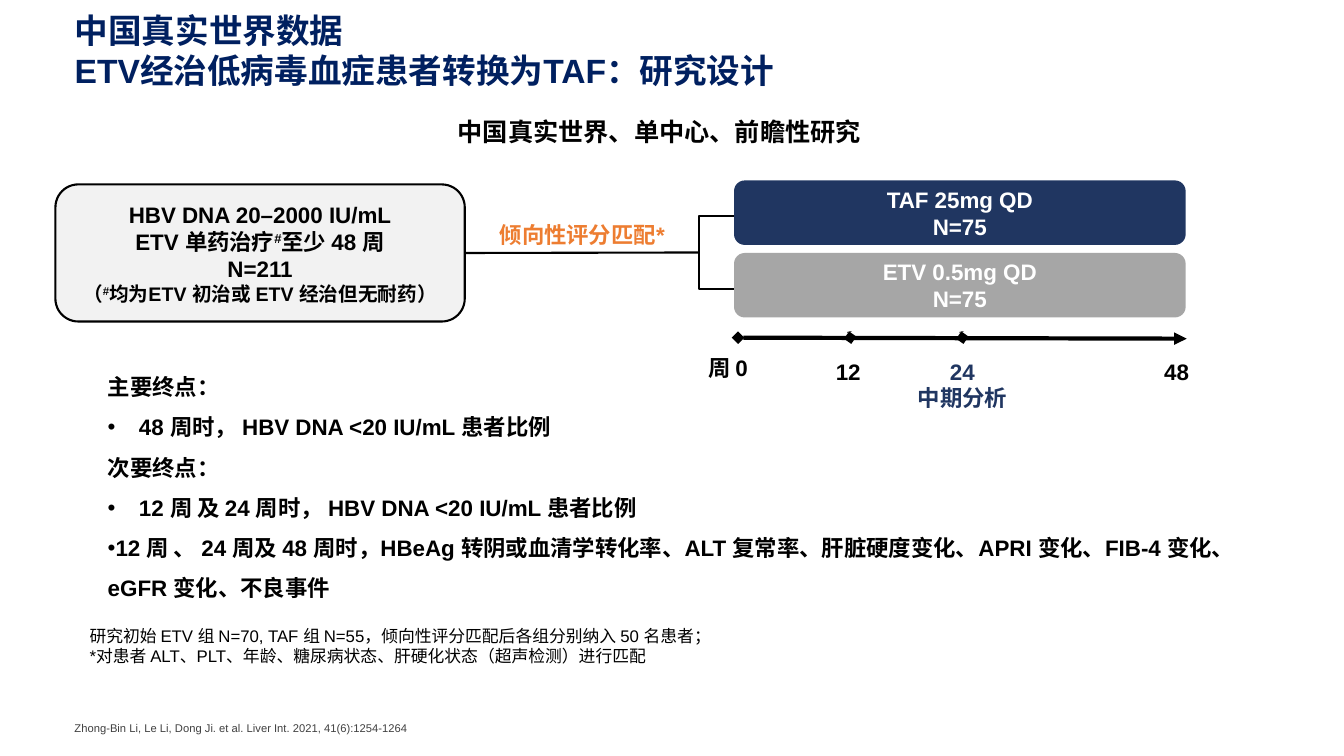
"""Build the study design slide for switching ETV patients to TAF."""
from pptx import Presentation
from pptx.dml.color import RGBColor
from pptx.enum.dml import MSO_LINE
from pptx.enum.shapes import MSO_CONNECTOR, MSO_SHAPE
from pptx.enum.text import MSO_ANCHOR, PP_ALIGN
from pptx.oxml.ns import qn
from pptx.util import Inches, Pt
from lxml.etree import SubElement

BLACK, WHITE, NAVY, ORANGE = "000000", "FFFFFF", "203661", "ED7D31"

TITLE = ["中国真实世界数据", "ETV经治低病毒血症患者转换为TAF：研究设计"]
SUBTITLE = ["中国真实世界、单中心、前瞻性研究"]
COHORT = ["HBV DNA 20–2000 IU/mL", "ETV 单药治疗#至少 48 周", "N=211",
          "（#均为ETV 初治或 ETV 经治但无耐药）"]
MATCHING = ["倾向性评分匹配*"]
ARMS = [(["TAF 25mg QD", "N=75"], NAVY), (["ETV 0.5mg QD", "N=75"], "A6A6A6")]
WEEKS = [
    (0, ["周 0"], -0.1, 3.46, BLACK),
    (12, ["12"], -0.02, 3.5, BLACK),
    (24, ["24", "中期分析"], 0, 3.5, NAVY),
    (48, ["48"], -0.1, 3.5, BLACK),
]
ENDPOINTS = [
    ("主要终点：", None),
    ("48 周时， HBV DNA <20 IU/mL 患者比例", 0.31),
    ("次要终点：", None),
    ("12 周 及 24 周时， HBV DNA <20 IU/mL 患者比例", 0.31),
    ("12 周 、 24 周及 48 周时，HBeAg 转阴或血清学转化率、ALT 复常率、肝脏硬度变化、"
     "APRI 变化、FIB-4 变化、eGFR 变化、不良事件", 0),
]
NOTES = ["研究初始 ETV 组 N=70, TAF 组 N=55，倾向性评分匹配后各组分别纳入 50 名患者；",
         "*对患者 ALT、PLT、年龄、糖尿病状态、肝硬化状态（超声检测）进行匹配"]
CITATION = ["Zhong-Bin Li, Le Li, Dong Ji. et al. Liver Int. 2021, 41(6):1254-1264"]

AXIS_LEFT, AXIS_WIDTH, AXIS_Y, LABEL_W = 7.32, 4.45, 3.35, 1.41


def rgb(color):
    return RGBColor.from_string(color)


def write(s, lines, size=16, color=BLACK, bold=True, align=PP_ALIGN.CENTER,
          anchor=MSO_ANCHOR.TOP, spacing=1.0):
    tf = s.text_frame
    tf.word_wrap = True
    tf.vertical_anchor = anchor
    for i, line in enumerate(lines):
        p = tf.paragraphs[0] if i == 0 else tf.add_paragraph()
        for name, value in {"alignment": align, "line_spacing": spacing,
                            "space_before": Pt(0)}.items():
            setattr(p, name, value)
        for j, part in enumerate(line.split("#")):
            for text, raised in (("#", True), (part, False))[0 if j else 1:]:
                r = p.add_run()
                r.text = text
                for name, value in {"name": "Arial", "size": Pt(size), "bold": bold}.items():
                    setattr(r.font, name, value)
                r.font.color.rgb = rgb(color)
                if raised:
                    r._r.get_or_add_rPr().set("baseline", "30000")
    return tf


def add_text(slide, box, lines, **fmt):
    return write(slide.shapes.add_textbox(*map(Inches, box)), lines, **fmt)


def add_box(slide, kind, box, fill, line=None):
    s = slide.shapes.add_shape(kind, *map(Inches, box))
    s.shadow.inherit = False
    s.fill.solid()
    s.fill.fore_color.rgb = rgb(fill)
    if line:
        s.line.color.rgb = rgb(line)
        s.line.width = Pt(1.5)
    else:
        s.line.fill.background()
    return s


def add_line(slide, start, end, width, head=None, tail=None):
    c = slide.shapes.add_connector(MSO_CONNECTOR.STRAIGHT, *map(Inches, start + end))
    c.line.color.rgb = rgb(BLACK)
    c.line.width = Pt(width)
    c.line.dash_style = MSO_LINE.SOLID
    for tag, kind in (("a:headEnd", head), ("a:tailEnd", tail)):
        if kind:
            SubElement(c.line._get_or_add_ln(), qn(tag), type=kind)
    SubElement(c._element.spPr, qn("a:effectLst"))
    return c


def add_bullet(p, margin):
    pPr = p._p.get_or_add_pPr()
    pPr.set("marL", str(Inches(margin)))
    pPr.set("indent", str(-Inches(0.31)))
    SubElement(pPr, qn("a:buFont"), typeface="Arial")
    SubElement(pPr, qn("a:buChar"), char="•")


def add_design(slide):
    cohort = add_box(slide, MSO_SHAPE.ROUNDED_RECTANGLE, (0.55, 1.83, 4.06, 1.36),
                     "F2F2F2", BLACK)
    tf = write(cohort, COHORT, anchor=MSO_ANCHOR.MIDDLE)
    for r in tf.paragraphs[-1].runs:
        r.font.size = Pt(14)
    bracket = add_box(slide, MSO_SHAPE.LEFT_BRACKET, (6.93, 2.14, 1.1, 0.73), WHITE, BLACK)
    bracket.adjustments[0] = 0
    link = add_line(slide, (4.61, 2.51), (6.93, 2.51), 1.5)
    link.begin_connect(cohort, 3)
    link.end_connect(bracket, 1)
    for i, (lines, fill) in enumerate(ARMS):
        arm = add_box(slide, MSO_SHAPE.ROUNDED_RECTANGLE, (7.28, 1.79 + i * 0.72, 4.48, 0.64), fill)
        write(arm, lines, color=WHITE, anchor=MSO_ANCHOR.MIDDLE)
    add_text(slide, (4.84, 2.14, 1.87, 0.37), MATCHING, color=ORANGE)


def add_timeline(slide):
    add_line(slide, (AXIS_LEFT, AXIS_Y), (AXIS_LEFT + AXIS_WIDTH, AXIS_Y + 0.01), 3,
             "diamond", "triangle")
    for week, lines, shift, top, color in WEEKS:
        x = AXIS_LEFT + AXIS_WIDTH * week / 48
        if 0 < week < 48:
            add_line(slide, (x, AXIS_Y), (x - 0.01, AXIS_Y - 0.06), 3, "diamond")
        add_text(slide, (x + shift - LABEL_W / 2, top, LABEL_W, 0.37 + 0.27 * (len(lines) - 1)),
                 lines, color=color)


def main():
    prs = Presentation()
    prs.slide_width, prs.slide_height = Inches(13.33), Inches(7.5)
    slide = prs.slides.add_slide(prs.slide_layouts[5])
    title = slide.shapes.title
    for name, value in zip(("left", "top", "width", "height"), (0.64, 0.12, 12.05, 0.75)):
        setattr(title, name, Inches(value))
    write(title, TITLE, size=24, color="002060", align=PP_ALIGN.LEFT, anchor=MSO_ANCHOR.MIDDLE)
    tf = add_text(slide, (2.02, 1.09, 9.04, 0.41), SUBTITLE, size=18, spacing=1.05)
    tf.paragraphs[0].space_after = Pt(6)
    add_design(slide)
    add_timeline(slide)
    tf = add_text(slide, (0.97, 3.52, 11.92, 2.47), [text for text, _ in ENDPOINTS],
                  align=PP_ALIGN.LEFT, spacing=1.5)
    for p, (_, margin) in zip(tf.paragraphs, ENDPOINTS):
        if margin is not None:
            add_bullet(p, margin)
    add_text(slide, (0.79, 6.16, 8.33, 0.5), NOTES, size=12, bold=False, align=PP_ALIGN.LEFT)
    add_text(slide, (0.64, 6.98, 11.06, 0.36), CITATION, size=8, color="404040", bold=False,
             align=PP_ALIGN.LEFT, anchor=MSO_ANCHOR.BOTTOM)
    prs.save("out.pptx")


if __name__ == "__main__":
    main()
